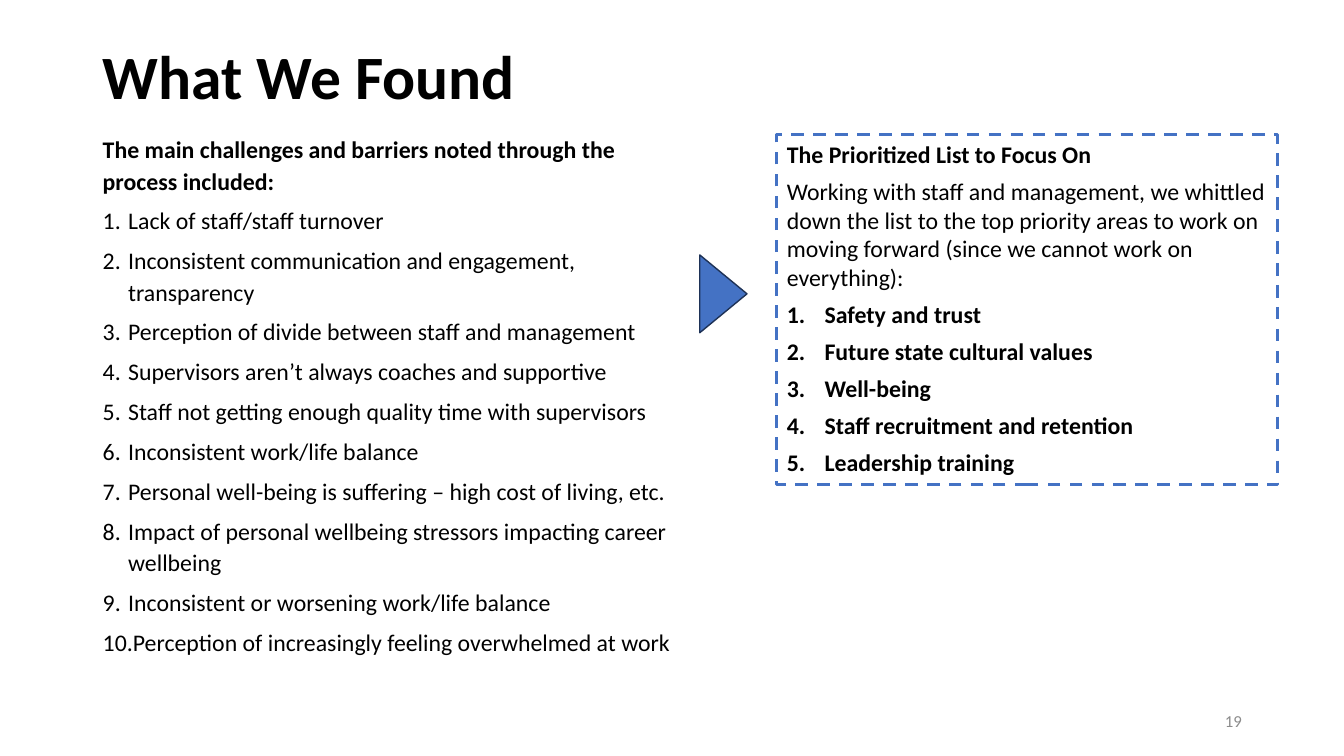
import pptx
import pptx.util
import pptx.dml.color
import pptx.enum.dml
import pptx.enum.shapes
import pptx.enum.text
import pptx.oxml

Cm = pptx.util.Cm
Pt = pptx.util.Pt
ANCHOR = pptx.enum.text.MSO_ANCHOR
ALIGN = pptx.enum.text.PP_ALIGN
SHAPES = pptx.enum.shapes.MSO_SHAPE

TITLE = "What We Found"
PAGE_NUMBER = "19"

# Each line: text, bold, numbered
CHALLENGES = [
    ("The main challenges and barriers noted through the process included:", True, False),
    ("Lack of staff/staff turnover", False, True),
    ("Inconsistent communication and engagement, transparency", False, True),
    ("Perception of divide between staff and management", False, True),
    ("Supervisors aren’t always coaches and supportive", False, True),
    ("Staff not getting enough quality time with supervisors", False, True),
    ("Inconsistent work/life balance", False, True),
    ("Personal well-being is suffering – high cost of living, etc.", False, True),
    ("Impact of personal wellbeing stressors impacting career wellbeing", False, True),
    ("Inconsistent or worsening work/life balance", False, True),
    ("Perception of increasingly feeling overwhelmed at work", False, True),
]
PRIORITIES = [
    ("The Prioritized List to Focus On", True, False),
    ("Working with staff and management, we whittled down the list to the top "
     "priority areas to work on moving forward (since we cannot work on everything):",
     False, False),
    ("Safety and trust", True, True),
    ("Future state cultural values", True, True),
    ("Well-being", True, True),
    ("Staff recruitment and retention", True, True),
    ("Leadership training", True, True),
]

FONT = "Calibri"
COLORS = {"text": "000000", "page": "8C8C8C", "accent": "4472C4", "edge": "1E3256"}
LEFT = 2.34


def color(name):
    return pptx.dml.color.RGBColor.from_string(COLORS[name])


def number(para, indent):
    """Give the paragraph an automatic number with a hanging indent in cm."""
    properties = para._p.get_or_add_pPr()
    properties.set("marL", str(Cm(indent)))
    properties.set("indent", str(-Cm(indent)))
    properties.append(pptx.oxml.parse_xml(
        '<a:buFont xmlns:a="http://schemas.openxmlformats.org/drawingml/2006/main"'
        ' typeface="+mj-lt"/>'))
    properties.append(pptx.oxml.parse_xml(
        '<a:buAutoNum xmlns:a="http://schemas.openxmlformats.org/drawingml/2006/main"'
        ' type="arabicPeriod"/>'))


def write(shape, lines, size, tone="text", align=ALIGN.LEFT, anchor=ANCHOR.TOP,
          spacing=1.0, indent=0):
    frame = shape.text_frame
    frame.word_wrap = True
    frame.vertical_anchor = anchor
    frame.text = "\n".join(text for text, _, _ in lines)
    for index, (para, (_, bold, numbered)) in enumerate(zip(frame.paragraphs, lines)):
        para.alignment = align
        para.line_spacing = spacing
        if index:
            para.space_before = Pt(6)
        if numbered:
            number(para, indent)
        for span in para.runs:
            span.font.name = FONT
            span.font.size = Pt(size)
            span.font.bold = bold
            span.font.color.rgb = color(tone)


def add_text(page, place, lines, size, **style):
    box = page.shapes.add_textbox(*map(Cm, place))
    write(box, lines, size, **style)


def add_shape(page, kind, place, line, width):
    shape = page.shapes.add_shape(kind, *map(Cm, place))
    shape.shadow.inherit = False
    shape.line.color.rgb = color(line)
    shape.line.width = Pt(width)
    return shape


def main():
    deck = pptx.Presentation()
    deck.slide_width, deck.slide_height = Cm(33.87), Cm(19.05)
    page = deck.slides.add_slide(deck.slide_layouts[6])

    add_text(page, (LEFT, 1.02, 29.21, 1.98), [(TITLE, True, False)], 44,
             anchor=ANCHOR.MIDDLE, spacing=0.9)
    add_text(page, (LEFT, 3.2, 14.99, 13.97), CHALLENGES, 17, spacing=1.1, indent=0.64)
    add_text(page, (23.93, 17.65, 7.62, 1.02), [(PAGE_NUMBER, False, False)], 12,
             tone="page", align=ALIGN.RIGHT, anchor=ANCHOR.MIDDLE)

    priority_box = add_shape(page, SHAPES.RECTANGLE, (19.58, 3.4, 12.62, 8.81), "accent", 2.25)
    priority_box.fill.background()
    priority_box.line.dash_style = pptx.enum.dml.MSO_LINE.DASH
    write(priority_box, PRIORITIES, 17, indent=0.95)
    priority_box.text_frame.auto_size = pptx.enum.text.MSO_AUTO_SIZE.SHAPE_TO_FIT_TEXT

    pointer = add_shape(page, SHAPES.ISOSCELES_TRIANGLE, (17.25, 6.81, 1.96, 1.19), "edge", 1)
    pointer.rotation = 90
    pointer.fill.solid()
    pointer.fill.fore_color.rgb = color("accent")

    deck.save("out.pptx")


if __name__ == "__main__":
    main()
